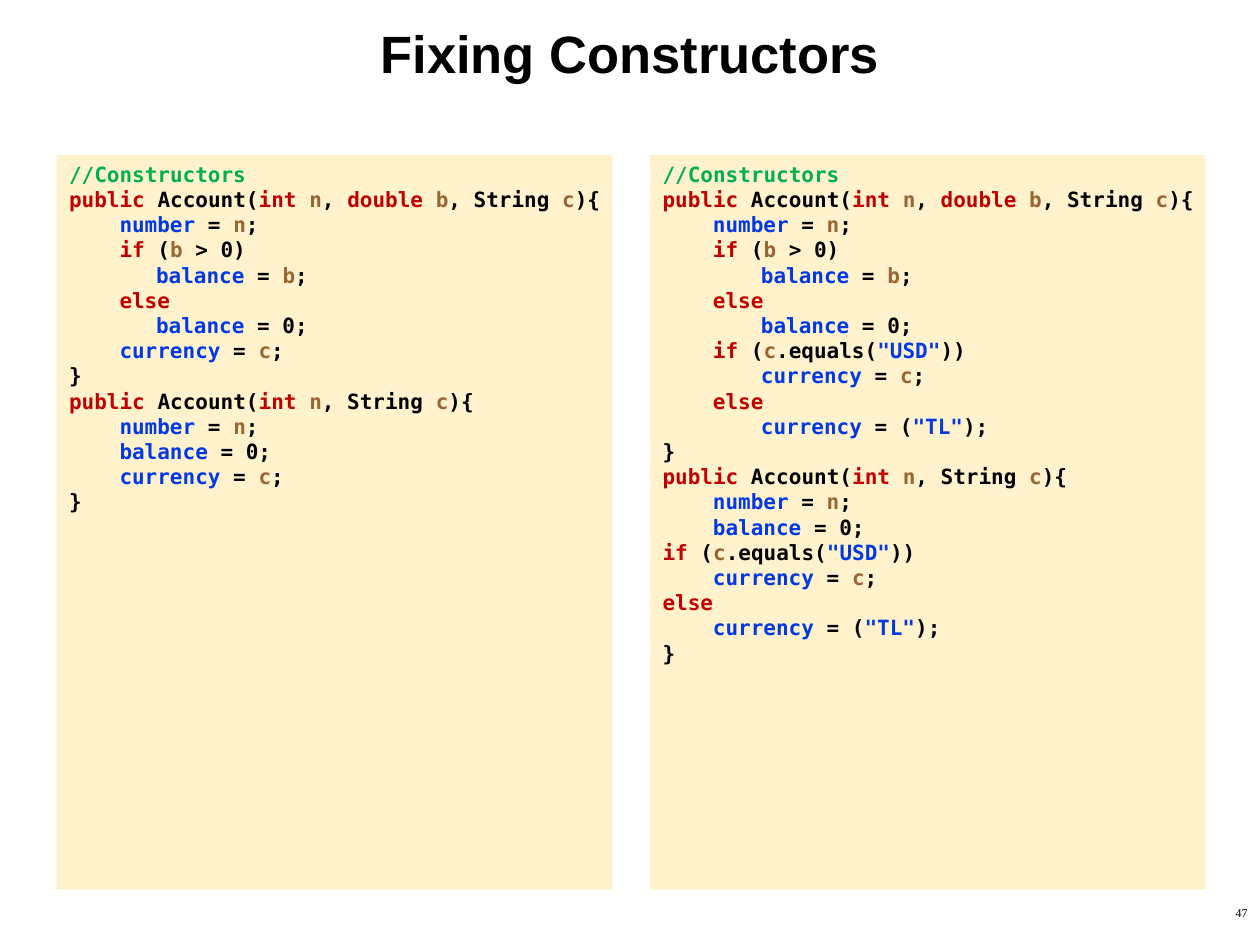
from itertools import groupby

from lxml.etree import SubElement
from pptx import Presentation
from pptx.dml.color import RGBColor
from pptx.enum.shapes import MSO_SHAPE as Shape
from pptx.enum.text import MSO_ANCHOR as Anchor, PP_ALIGN as Align
from pptx.oxml.ns import qn
from pptx.util import Pt

COLORS = {
    "panel": "FFC000",
    "plain": "000000",
    "comment": "00B050",
    "keyword": "C00000",
    "field": "0039E5",
    "parameter": "996633",
}
KINDS = {
    "keyword": {"public", "int", "double", "if", "else"},
    "field": {"number", "balance", "currency", '"USD"', '"TL"'},
    "parameter": {"n", "b", "c"},
}

FULL_HEADER = [
    (0, "//Constructors"),
    (0, "public Account(int n, double b, String c){"),
    (1, "number = n;"),
    (1, "if (b > 0)"),
    (2, "balance = b;"),
    (1, "else"),
    (2, "balance = 0;"),
]
SHORT_HEADER = [
    (0, "}"),
    (0, "public Account(int n, String c){"),
    (1, "number = n;"),
    (1, "balance = 0;"),
]
ASSIGN_CURRENCY = [(1, "currency = c;")]
CHECK_CURRENCY = [
    (0, 'if (c.equals("USD"))'),
    (1, "currency = c;"),
    (0, "else"),
    (1, 'currency = ("TL");'),
]
CHECK_INDENTED = [(level + 1, line) for level, line in CHECK_CURRENCY]
CLOSING = [(0, "}")]

BEFORE = FULL_HEADER + ASSIGN_CURRENCY + SHORT_HEADER + ASSIGN_CURRENCY + CLOSING
AFTER = FULL_HEADER + CHECK_INDENTED + SHORT_HEADER + CHECK_CURRENCY + CLOSING


def color(name):
    return RGBColor.from_string(COLORS[name])


def kind_of(word):
    return next((kind for kind, words in KINDS.items() if word in words), "plain")


def highlight(line):
    if line.startswith("//"):
        return [(line, "comment")]
    words = ["".join(chars) for _, chars in
             groupby(line, lambda char: char.isalnum() or char == '"')]
    return [("".join(group), kind) for kind, group in groupby(words, kind_of)]


def add_run(paragraph, text, font="Arial", size=12, bold=False, tone="plain"):
    run = paragraph.add_run()
    run.text = text
    run.font.name = font
    run.font.size = Pt(size)
    run.font.bold = bold
    run.font.color.rgb = color(tone)


def add_frame(slide, left, top, width, height, anchor=Anchor.TOP):
    frame = slide.shapes.add_textbox(Pt(left), Pt(top), Pt(width), Pt(height)).text_frame
    frame.word_wrap = True
    frame.vertical_anchor = anchor
    return frame


def add_label(slide, text, box, align, anchor=Anchor.TOP, **style):
    paragraph = add_frame(slide, *box, anchor=anchor).paragraphs[0]
    paragraph.alignment = align
    add_run(paragraph, text, **style)


def add_panel(slide, left, top):
    panel = slide.shapes.add_shape(Shape.RECTANGLE, Pt(left), Pt(top), Pt(317.5), Pt(419.8))
    panel.shadow.inherit = False
    panel.line.fill.background()
    panel.fill.solid()
    panel.fill.fore_color.rgb = color("panel")
    tint = next(panel.fill._xPr.iter(qn("a:srgbClr")))
    SubElement(tint, qn("a:alpha"), val="20000")


def add_code(slide, left, top, lines, indents):
    frame = add_frame(slide, left, top, 327.6, 424.8)
    for index, (level, line) in enumerate(lines):
        paragraph = frame.add_paragraph() if index else frame.paragraphs[0]
        properties = paragraph._p.get_or_add_pPr()
        properties.set("marL", str(Pt(indents[level])))
        properties.set("indent", "0")
        for text, tone in highlight(line):
            add_run(paragraph, text, font="DejaVu Sans Mono", bold=True, tone=tone)


def main():
    deck = Presentation()
    deck.slide_width, deck.slide_height = Pt(720), Pt(540)
    slide = deck.slides.add_slide(deck.slide_layouts[6])

    add_label(slide, "Fixing Constructors", (0, 0, 720, 60.5), Align.CENTER,
              anchor=Anchor.MIDDLE, size=30, bold=True)
    top = 88.6
    for left, lines, indents in ((32.4, BEFORE, (0, 28.8, 49.7)),
                                 (371.5, AFTER, (0, 28.8, 56.2))):
        add_panel(slide, left, top)
        add_code(slide, left, top, lines, indents)
    add_label(slide, "47", (570.2, 514.1, 149.8, 25.9), Align.RIGHT,
              font="Times New Roman", size=6.8)

    deck.save("out.pptx")


if __name__ == "__main__":
    main()
